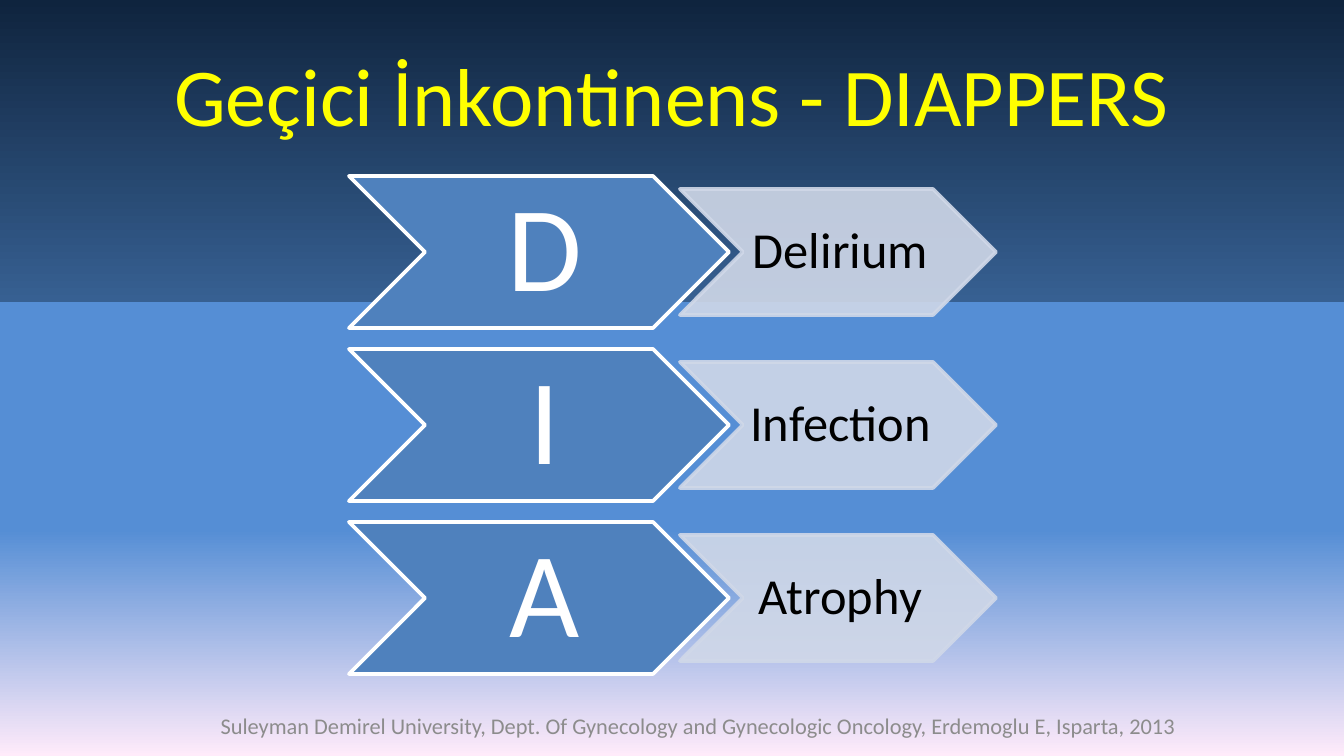
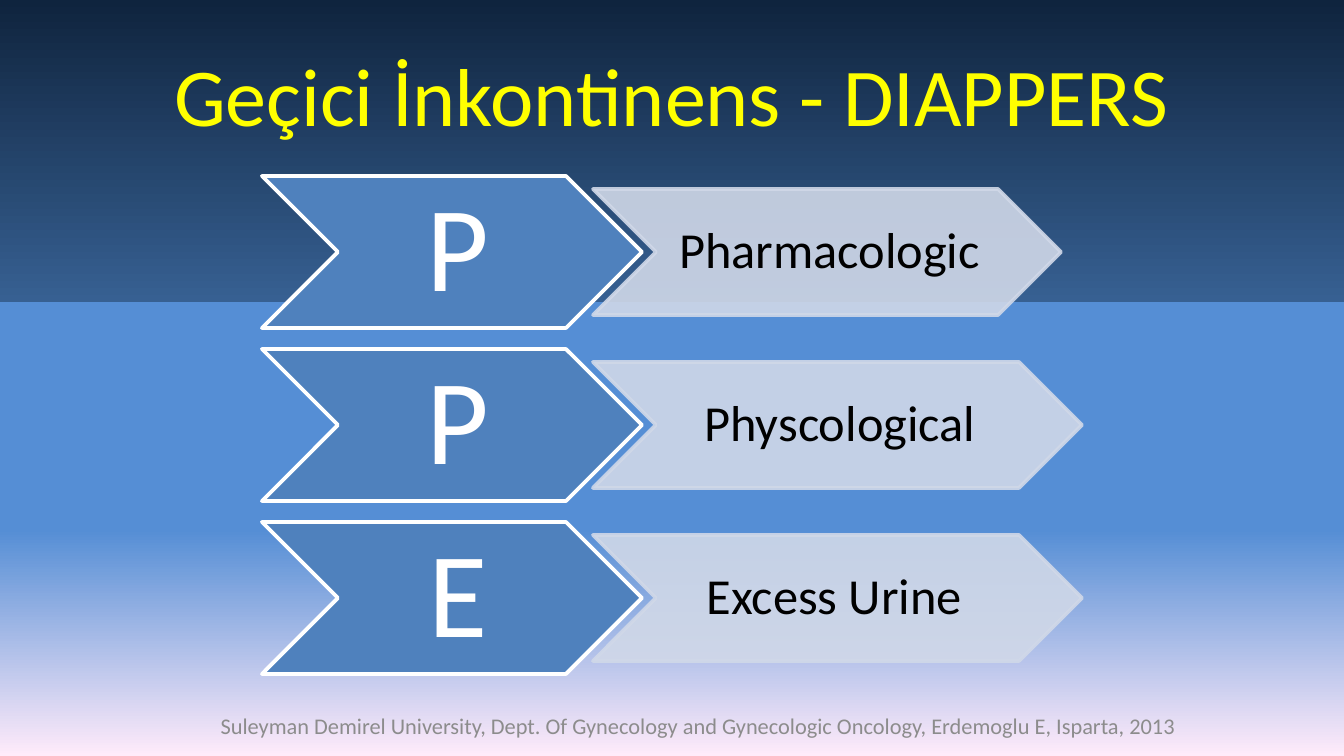
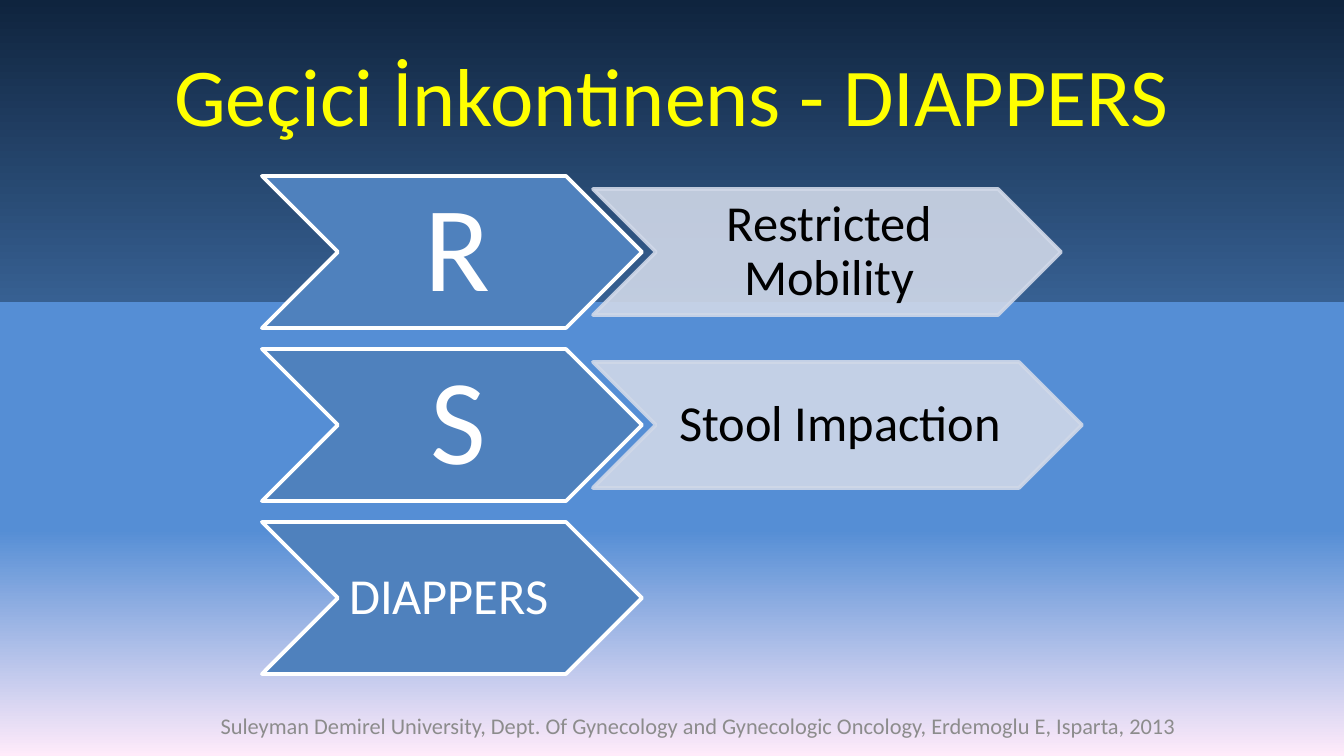
from lxml import etree
from pptx import Presentation
from pptx.dml.color import RGBColor
from pptx.enum.shapes import MSO_SHAPE
from pptx.enum.text import MSO_ANCHOR, PP_ALIGN
from pptx.oxml.ns import qn
from pptx.util import Pt

CHEVRON = MSO_SHAPE.CHEVRON
MIDDLE = MSO_ANCHOR.MIDDLE
CENTER = PP_ALIGN.CENTER

PX = 914400 / 134.4
FONT = "Calibri"
YELLOW, GREY, WHITE, BLACK = "FFFF00", "8C8C8C", "FFFFFF", "000000"
BLUE, PALE_BLUE = "4F81BD", "D0D8E8"
BACKGROUND_STOPS = [(0, "0F243E"), (40, "376092"), (40, "558ED5"), (70, "558ED5"), (100, "FFEBFA")]

TITLE = "Geçici İnkontinens - DIAPPERS"
FOOTER = ("Suleyman Demirel University, Dept. Of Gynecology and Gynecologic Oncology, "
          "Erdemoglu E, Isparta, 2013")

# Left edge of the rows, then (letter, cause, width of the cause's chevron)
SLIDES = [
    (349, [("D", "Delirium", 316), ("I", "Infection", 316), ("A", "Atrophy", 316)]),
    (262, [("P", "Pharmacologic", 468), ("P", "Physcological", 489), ("E", "Excess Urine ", 489)]),
    (262, [("R", "Restricted Mobility", 468), ("S", "Stool Impaction", 489), ("DIAPPERS ", None, 0)]),
]
ROW_TOP, ROW_PITCH = 176, 173
LETTER_WIDTH, LETTER_HEIGHT = 380, 152
CAUSE_OFFSET, CAUSE_HEIGHT = 331, 126
LETTER_SIZE, WORD_SIZE = 65, 27


def write(shape, text, size, color):
    """Put one centred paragraph in the shape."""
    frame = shape.text_frame
    frame.text = text
    frame.word_wrap = True
    frame.vertical_anchor = MIDDLE
    paragraph = frame.paragraphs[0]
    paragraph.alignment = CENTER
    font = paragraph.runs[0].font
    font.name = FONT
    font.size = Pt(size)
    font.color.rgb = RGBColor.from_string(color)


def add_chevron(slide, box, text, size, text_color, fill_color, line_color, opacity=100):
    chevron = slide.shapes.add_shape(CHEVRON, *[round(v * PX) for v in box])
    chevron.shadow.inherit = False
    chevron.fill.solid()
    chevron.fill.fore_color.rgb = RGBColor.from_string(fill_color)
    chevron.line.color.rgb = RGBColor.from_string(line_color)
    chevron.line.width = Pt(2)
    if opacity < 100:
        for color in chevron.element.spPr.iter(qn("a:srgbClr")):
            etree.SubElement(color, qn("a:alpha"), val=str(opacity * 1000))
    write(chevron, text, size, text_color)
    frame = chevron.text_frame
    frame.paragraphs[0].line_spacing = 0.9
    left, vertical = (12, 7) if size == LETTER_SIZE else (5, 3)
    frame.margin_left = round(left * PX)
    frame.margin_right = 0
    frame.margin_top = frame.margin_bottom = round(vertical * PX)


prs = Presentation()
prs.slide_width = round(1344 * PX)
prs.slide_height = round(756 * PX)

master = prs.slide_master
backdrop = master.background.fill
backdrop.gradient()
backdrop.gradient_angle = 270
stop_list = master.element.find(".//" + qn("a:gsLst"))
for stop in list(stop_list):
    stop_list.remove(stop)
for position, color in BACKGROUND_STOPS:
    stop = etree.SubElement(stop_list, qn("a:gs"), pos=str(position * 1000))
    etree.SubElement(stop, qn("a:srgbClr"), val=color)

for row_left, rows in SLIDES:
    slide = prs.slides.add_slide(prs.slide_layouts[6])
    for box, text, size, color in [((95, 706, 1207, 40), FOOTER, 12, GREY),
                                   ((67, 31, 1210, 126), TITLE, 44, YELLOW)]:
        write(slide.shapes.add_textbox(*[round(v * PX) for v in box]), text, size, color)

    for index, (letter, cause, cause_width) in enumerate(rows):
        top = ROW_TOP + index * ROW_PITCH
        add_chevron(slide, (row_left, top, LETTER_WIDTH, LETTER_HEIGHT), letter,
                    LETTER_SIZE if cause else WORD_SIZE, WHITE, BLUE, WHITE)
        if cause:
            cause_top = top + (LETTER_HEIGHT - CAUSE_HEIGHT) // 2
            add_chevron(slide, (row_left + CAUSE_OFFSET, cause_top, cause_width, CAUSE_HEIGHT),
                        cause, WORD_SIZE, BLACK, PALE_BLUE, PALE_BLUE, opacity=90)

prs.save("out.pptx")
